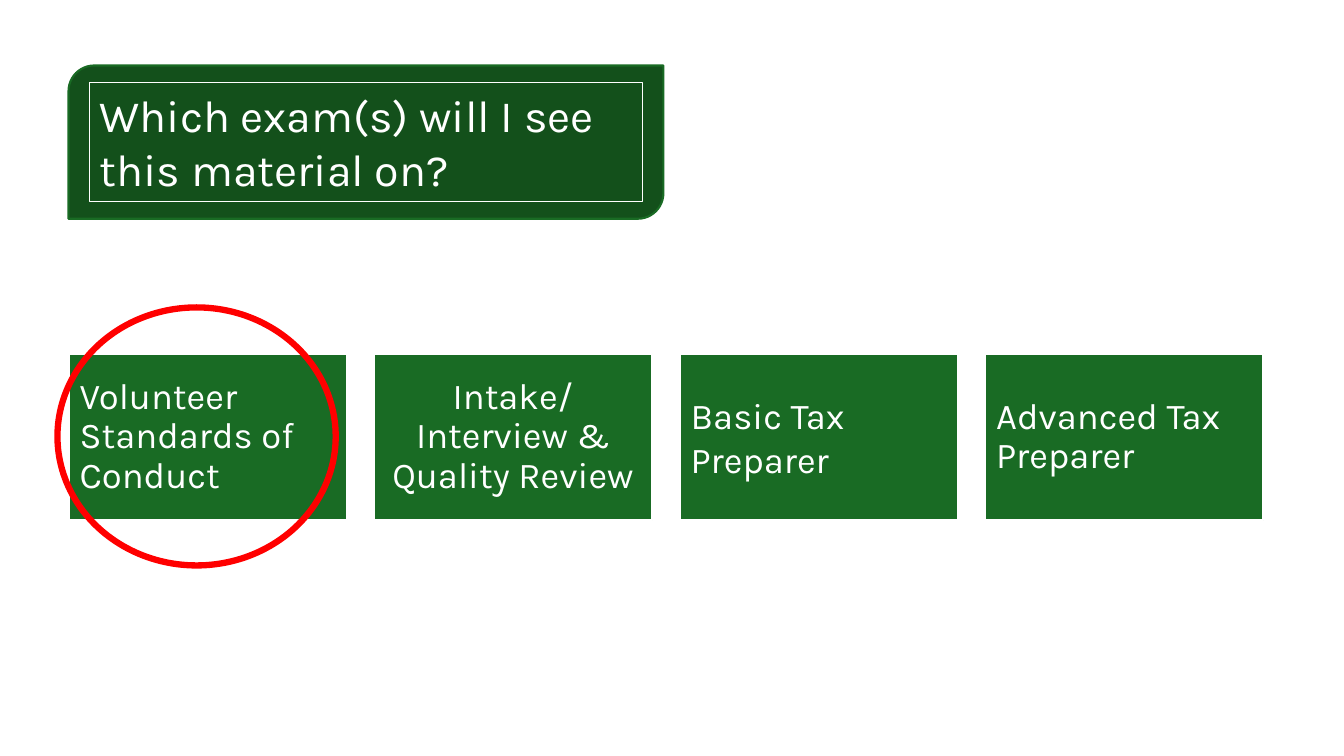
from dataclasses import dataclass

from pptx import Presentation
from pptx.dml.color import RGBColor
from pptx.enum.shapes import MSO_SHAPE
from pptx.enum.text import MSO_ANCHOR, PP_ALIGN
from pptx.util import Inches, Pt

RECTANGLE = MSO_SHAPE.RECTANGLE
DIAGONAL_ROUND = MSO_SHAPE.ROUND_2_DIAG_RECTANGLE
OVAL = MSO_SHAPE.OVAL
TOP, MIDDLE = MSO_ANCHOR.TOP, MSO_ANCHOR.MIDDLE
LEFT, CENTER = PP_ALIGN.LEFT, PP_ALIGN.CENTER


@dataclass(frozen=True)
class Theme:
    font: str = "Karla"
    title_size: int = 32
    card_size: int = 26
    white: str = "FFFFFF"
    green: str = "196B24"
    dark_green: str = "13501B"
    red: str = "FF0000"


THEME = Theme()

# Exam name, alignment, line spacing
EXAMS = [
    ("Volunteer Standards of Conduct", LEFT, 0.9),
    ("Intake/Interview & Quality Review", CENTER, 0.9),
    ("Basic Tax Preparer", LEFT, 1.0),
    ("Advanced Tax Preparer", LEFT, 0.9),
]


def add_outlined(page, kind, box, fill, line, line_width):
    """Add a shape in box (left, top, width, height in inches); fill may be None."""
    shape = page.shapes.add_shape(kind, *map(Inches, box))
    shape.shadow.inherit = False
    if fill:
        shape.fill.solid()
        shape.fill.fore_color.rgb = RGBColor.from_string(fill)
    else:
        shape.fill.background()
    shape.line.color.rgb = RGBColor.from_string(line)
    shape.line.width = Pt(line_width)
    return shape


def write_text(shape, text, size, anchor, insets, align=LEFT, spacing=1.0):
    """Write white text; insets are (horizontal, vertical) in inches."""
    across, down = map(Inches, insets)
    frame = shape.text_frame
    para = frame.paragraphs[0]
    span = para.add_run()
    span.text = text
    span.font.color.rgb = RGBColor.from_string(THEME.white)
    formats = [
        (frame, {"word_wrap": True, "vertical_anchor": anchor,
                 "margin_left": across, "margin_right": across,
                 "margin_top": down, "margin_bottom": down}),
        (para, {"alignment": align, "line_spacing": spacing}),
        (span.font, {"name": THEME.font, "size": Pt(size)}),
    ]
    for target, values in formats:
        for name, value in values.items():
            setattr(target, name, value)


def add_exam_cards(page, box, gap):
    left, top, width, height = box
    card_width = (width - gap * (len(EXAMS) - 1)) / len(EXAMS)
    for index, (exam, align, spacing) in enumerate(EXAMS):
        card_left = left + index * (card_width + gap)
        card = add_outlined(page, RECTANGLE, (card_left, top, card_width, height),
                            THEME.green, THEME.white, 1.5)
        write_text(card, exam, THEME.card_size, MIDDLE, (0.11, 0.11), align, spacing)


def add_title_banner(page, box):
    left, top, width, height = box
    across, down = 0.21, 0.17
    add_outlined(page, DIAGONAL_ROUND, box, THEME.dark_green, THEME.green, 1.5)
    inner = (left + across, top + down, width - 2 * across, height - 2 * down)
    title = add_outlined(page, RECTANGLE, inner, None, THEME.white, 0.75)
    write_text(title, "Which exam(s) will I see this material on?",
               THEME.title_size, TOP, (0.1, 0.05))


def add_highlight_ring(page, box):
    add_outlined(page, OVAL, box, None, THEME.red, 4.5)


def main():
    deck = Presentation()
    deck.slide_width, deck.slide_height = Inches(13.33), Inches(7.5)
    page = deck.slides.add_slide(deck.slide_layouts[6])
    add_exam_cards(page, (0.68, 3.51, 11.85, 1.65), gap=0.27)
    add_title_banner(page, (0.68, 0.65, 5.9, 1.52))
    add_highlight_ring(page, (0.57, 3.05, 2.76, 2.56))
    deck.save("out.pptx")


if __name__ == "__main__":
    main()
